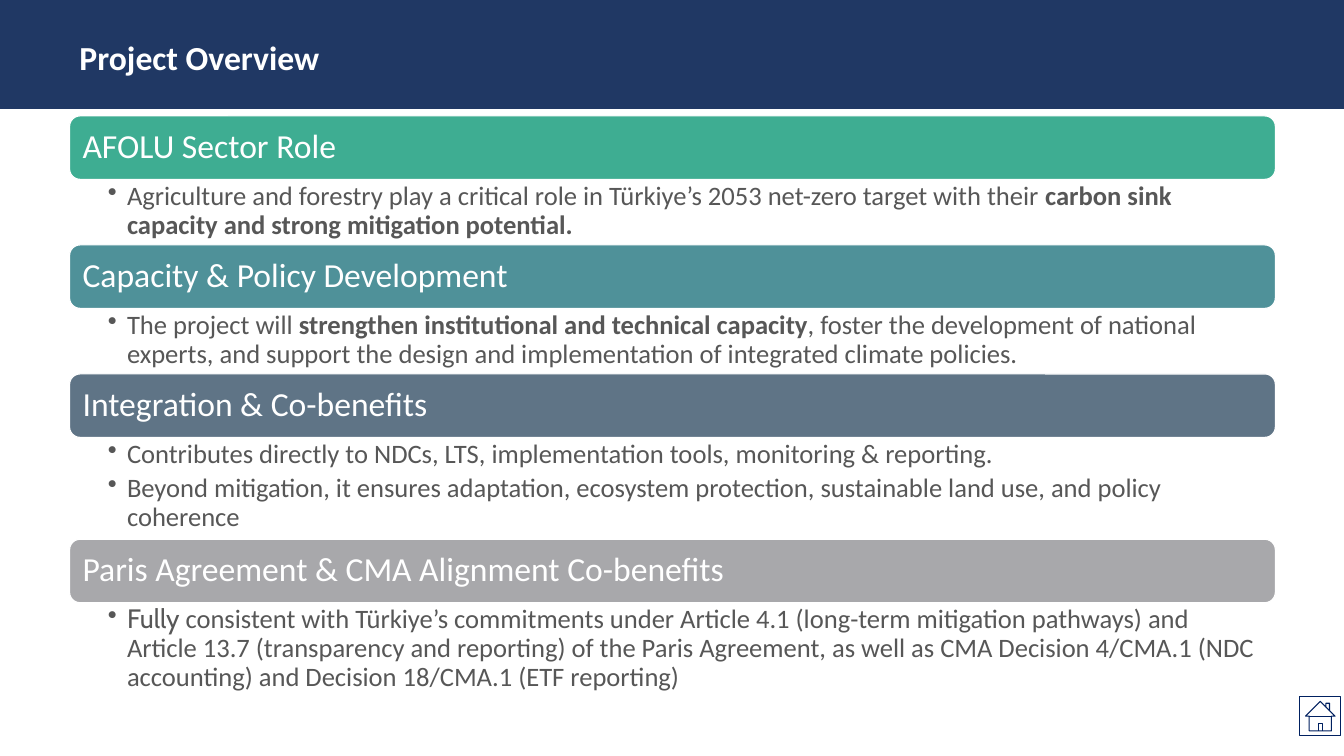
from lxml import etree
from pptx import Presentation
from pptx.dml.color import RGBColor
from pptx.enum.shapes import MSO_SHAPE
from pptx.enum.text import MSO_ANCHOR, PP_ALIGN
from pptx.oxml.ns import qn
from pptx.util import Inches, Pt

RECTANGLE = MSO_SHAPE.RECTANGLE
ROUNDED = MSO_SHAPE.ROUNDED_RECTANGLE
HOME = MSO_SHAPE.ACTION_BUTTON_HOME
TOP, MIDDLE = MSO_ANCHOR.TOP, MSO_ANCHOR.MIDDLE
LEFT = PP_ALIGN.LEFT

WHITE = RGBColor(0xFF, 0xFF, 0xFF)
NAVY = RGBColor(0x20, 0x38, 0x64)
BUTTON_BLUE = RGBColor(0x00, 0x20, 0x60)
GREEN = RGBColor(0x3E, 0xAD, 0x92)
TEAL = RGBColor(0x4F, 0x91, 0x99)
SLATE = RGBColor(0x5F, 0x74, 0x86)
GRAY = RGBColor(0xA8, 0xA8, 0xAB)
BODY_GRAY = RGBColor(0x57, 0x57, 0x57)

BODY_FONT, ACCENT_FONT = "Calibri", "Cabin"

# Content: heading, bar colour, body height, bullets made of (text, bold, font)
TITLE = "Project Overview"
SECTIONS = [
    ("AFOLU Sector Role", GREEN, 0.65, [
        [("Agriculture and forestry play a critical role in Türkiye’s 2053 net-zero "
          "target with their ", False, BODY_FONT),
         ("carbon sink capacity and strong mitigation potential.", True, BODY_FONT)],
    ]),
    ("Capacity & Policy Development", TEAL, 0.65, [
        [("The project will ", False, BODY_FONT),
         ("strengthen institutional and technical capacity", True, BODY_FONT),
         (", foster the development of national experts, and support the design and "
          "implementation of integrated climate policies.", False, BODY_FONT)],
    ]),
    ("Integration & Co-benefits", SLATE, 1.01, [
        [("Contributes directly to NDCs, LTS, implementation tools, monitoring & "
          "reporting.", False, BODY_FONT)],
        [("Beyond mitigation, it ensures adaptation, ecosystem protection, sustainable "
          "land use, and policy coherence", False, BODY_FONT)],
    ]),
    ("Paris Agreement & CMA Alignment Co-benefits", GRAY, 0.95, [
        [("Fully ", False, ACCENT_FONT),
         ("consistent with Türkiye’s commitments under Article 4.1 (long-term "
          "mitigation pathways) and Article 13.7 (transparency and reporting) of the "
          "Paris Agreement, as well as CMA Decision 4/CMA.1 (NDC accounting) and "
          "Decision 18/CMA.1 (ETF reporting)", False, BODY_FONT)],
    ]),
]

# Layout in inches
SLIDE_W, SLIDE_H = 13.33, 7.5
MARGIN, CONTENT_W = 0.69, 11.96
FIRST_BAR_TOP, BAR_H = 1.15, 0.63
BULLET_INDENT = 0.19


def add_box(slide, kind, left, top, width, height, fill=None, line=None, weight=0.85):
    box = slide.shapes.add_shape(kind, Inches(left), Inches(top),
                                 Inches(width), Inches(height))
    box.shadow.inherit = False
    if fill is None:
        box.fill.background()
    else:
        box.fill.solid()
        box.fill.fore_color.rgb = fill
    if line is None:
        box.line.fill.background()
    else:
        box.line.color.rgb = line
        box.line.width = Pt(weight)
    return box


def add_text(slide, left, top, width, height):
    return slide.shapes.add_textbox(Inches(left), Inches(top),
                                    Inches(width), Inches(height)).text_frame


def set_frame(frame, insets, anchor):
    frame.word_wrap = True
    frame.vertical_anchor = anchor
    (frame.margin_left, frame.margin_top,
     frame.margin_right, frame.margin_bottom) = map(Inches, insets)


def write_heading(frame, text, bold=False):
    frame.text = text
    paragraph = frame.paragraphs[0]
    paragraph.alignment = LEFT
    paragraph.line_spacing = 0.9
    style_run(paragraph.runs[0], 24, WHITE, bold, BODY_FONT)


def style_run(run, size, color, bold, font):
    run.font.size = Pt(size)
    run.font.color.rgb = color
    run.font.bold = bold
    run.font.name = font


def write_bullet(paragraph, pieces):
    paragraph.line_spacing = 0.9
    paragraph.space_after = Pt(4)
    properties = paragraph._p.get_or_add_pPr()
    properties.set("marL", str(Inches(BULLET_INDENT)))
    properties.set("indent", str(-Inches(BULLET_INDENT)))
    etree.SubElement(properties, qn("a:buChar")).set("char", "•")
    for text, bold, font in pieces:
        run = paragraph.add_run()
        run.text = text
        style_run(run, 19, BODY_GRAY, bold, font)


def main():
    prs = Presentation()
    prs.slide_width, prs.slide_height = Inches(SLIDE_W), Inches(SLIDE_H)
    slide = prs.slides.add_slide(prs.slide_layouts[6])

    # Header band and title
    add_box(slide, RECTANGLE, 0, -0.01, SLIDE_W, 1.09, NAVY)
    title = add_text(slide, MARGIN, 0.36, CONTENT_W, 0.36)
    set_frame(title, (0.1, 0.05, 0.1, 0.05), TOP)
    write_heading(title, TITLE, bold=True)

    # Stacked sections: coloured bar, then its bullets
    top = FIRST_BAR_TOP
    for heading, color, body_h, bullets in SECTIONS:
        bar = add_box(slide, ROUNDED, MARGIN, top, CONTENT_W, BAR_H, color, WHITE)
        set_frame(bar.text_frame, (0.1, 0.1, 0.1, 0.1), MIDDLE)
        write_heading(bar.text_frame, heading)

        body = add_text(slide, MARGIN, top + BAR_H, CONTENT_W, body_h)
        set_frame(body, (0.38, 0.03, 0.19, 0.03), TOP)
        for index, pieces in enumerate(bullets):
            paragraph = body.add_paragraph() if index else body.paragraphs[0]
            write_bullet(paragraph, pieces)
        top += BAR_H + body_h

    # Home button
    add_box(slide, HOME, 12.89, 6.91, 0.41, 0.39, line=BUTTON_BLUE, weight=0.75)

    prs.save("out.pptx")


if __name__ == "__main__":
    main()
